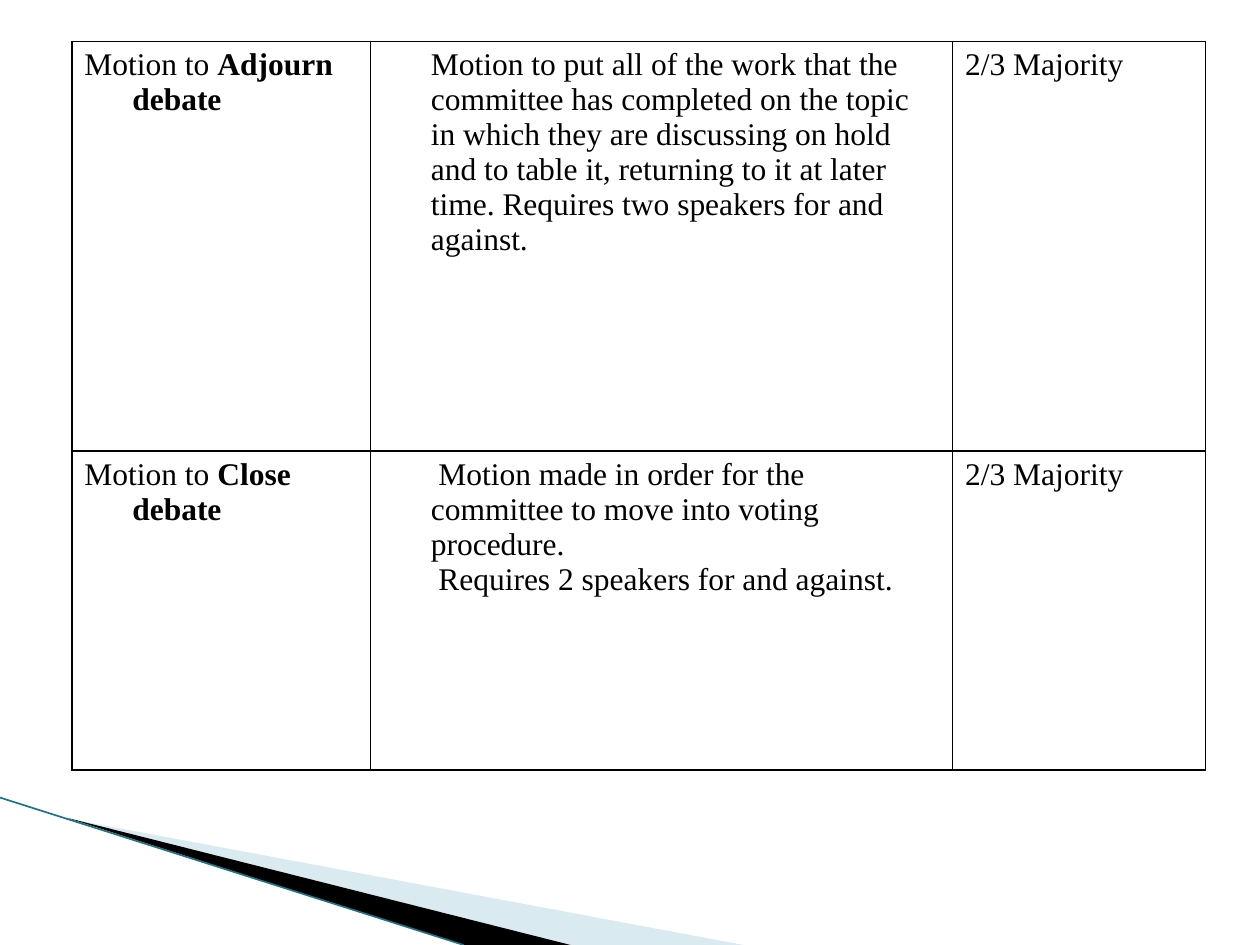
from lxml import etree
from pptx import Presentation
from pptx.dml.color import RGBColor
from pptx.enum.shapes import MSO_CONNECTOR
from pptx.oxml.ns import qn
from pptx.util import Inches, Pt

BLACK = RGBColor(0x00, 0x00, 0x00)
PALE_BLUE = RGBColor(0xA0, 0xCB, 0xDC)
TEAL = RGBColor(0x1B, 0x75, 0x87)
FONT = "Times New Roman"

HANGING, BLOCK, NUDGED = -0.38, 0, 0.06
MOTIONS = [
    ("Adjourn debate", BLOCK,
     ["Motion to put all of the work that the committee has completed on the topic "
      "in which they are discussing on hold and to table it, returning to it at later "
      "time. Requires two speakers for and against."],
     "2/3 Majority"),
    ("Close debate", NUDGED,
     ["Motion made in order for the committee to move into voting procedure.",
      "Requires 2 speakers for and against."],
     "2/3 Majority"),
]
COLUMN_WIDTHS = [2.37, 4.62, 2.01]
ROW_HEIGHTS = [3.25, 2.53]
WEDGES = [
    ([(0.55, 6.5), (5.9, 7.5), (4.53, 7.5)], PALE_BLUE, 40),
    ([(0.53, 6.49), (4.53, 7.5), (3.68, 7.5)], BLACK, 100),
]


def add_wedge(slide, points, color, opacity):
    corners = [(Inches(x), Inches(y)) for x, y in points]
    builder = slide.shapes.build_freeform(*corners[0], scale=1.0)
    builder.add_line_segments(corners[1:], close=True)
    wedge = builder.convert_to_shape()
    wedge.shadow.inherit = False
    wedge.line.fill.background()
    wedge.fill.solid()
    wedge.fill.fore_color.rgb = color
    if opacity < 100:
        srgb = wedge.fill._xPr.find(".//" + qn("a:srgbClr"))
        etree.SubElement(srgb, qn("a:alpha"), val=str(opacity * 1000))


def add_edge(slide):
    edge = slide.shapes.add_connector(
        MSO_CONNECTOR.STRAIGHT, 0, Inches(6.33), Inches(3.68), Inches(7.5))
    edge.line.color.rgb = TEAL
    edge.line.width = Pt(0.95)
    etree.SubElement(edge._element.spPr, qn("a:effectLst"))


def border_cell(cell):
    properties = cell._tc.get_or_add_tcPr()
    for position, side in enumerate(("a:lnL", "a:lnR", "a:lnT", "a:lnB")):
        border = etree.Element(qn(side), w=str(Pt(1)))
        fill = etree.SubElement(border, qn("a:solidFill"))
        etree.SubElement(fill, qn("a:srgbClr"), val=str(BLACK))
        properties.insert(position, border)


def fill_cell(cell, paragraphs, indent):
    cell.fill.background()
    border_cell(cell)
    frame = cell.text_frame
    for number, pieces in enumerate(paragraphs):
        paragraph = frame.add_paragraph() if number else frame.paragraphs[0]
        layout = paragraph._p.get_or_add_pPr()
        layout.set("marL", str(Inches(0.38)))
        layout.set("indent", str(Inches(indent)))
        for words, bold in pieces:
            run = paragraph.add_run()
            run.text = words
            run.font.name = FONT
            run.font.size = Pt(18)
            run.font.bold = bold
            run.font.color.rgb = BLACK


def add_motions(slide):
    table = slide.shapes.add_table(
        len(MOTIONS), len(COLUMN_WIDTHS), Inches(0.57), Inches(0.33),
        Inches(sum(COLUMN_WIDTHS)), Inches(sum(ROW_HEIGHTS))).table
    table.first_row = table.horz_banding = False
    for column, width in zip(table.columns, COLUMN_WIDTHS):
        column.width = Inches(width)
    for row, height, motion in zip(table.rows, ROW_HEIGHTS, MOTIONS):
        row.height = Inches(height)
        name, indent, purpose, vote = motion
        title_cell, purpose_cell, vote_cell = row.cells
        fill_cell(title_cell, [[("Motion to ", False), (name, True)]], HANGING)
        fill_cell(purpose_cell, [[(words, False)] for words in purpose], indent)
        fill_cell(vote_cell, [[(vote, False)]], HANGING)


def main():
    deck = Presentation()
    deck.slide_width, deck.slide_height = Inches(10), Inches(7.5)
    slide = deck.slides.add_slide(deck.slide_layouts[6])
    for points, color, opacity in WEDGES:
        add_wedge(slide, points, color, opacity)
    add_edge(slide)
    add_motions(slide)
    deck.save("out.pptx")


if __name__ == "__main__":
    main()
